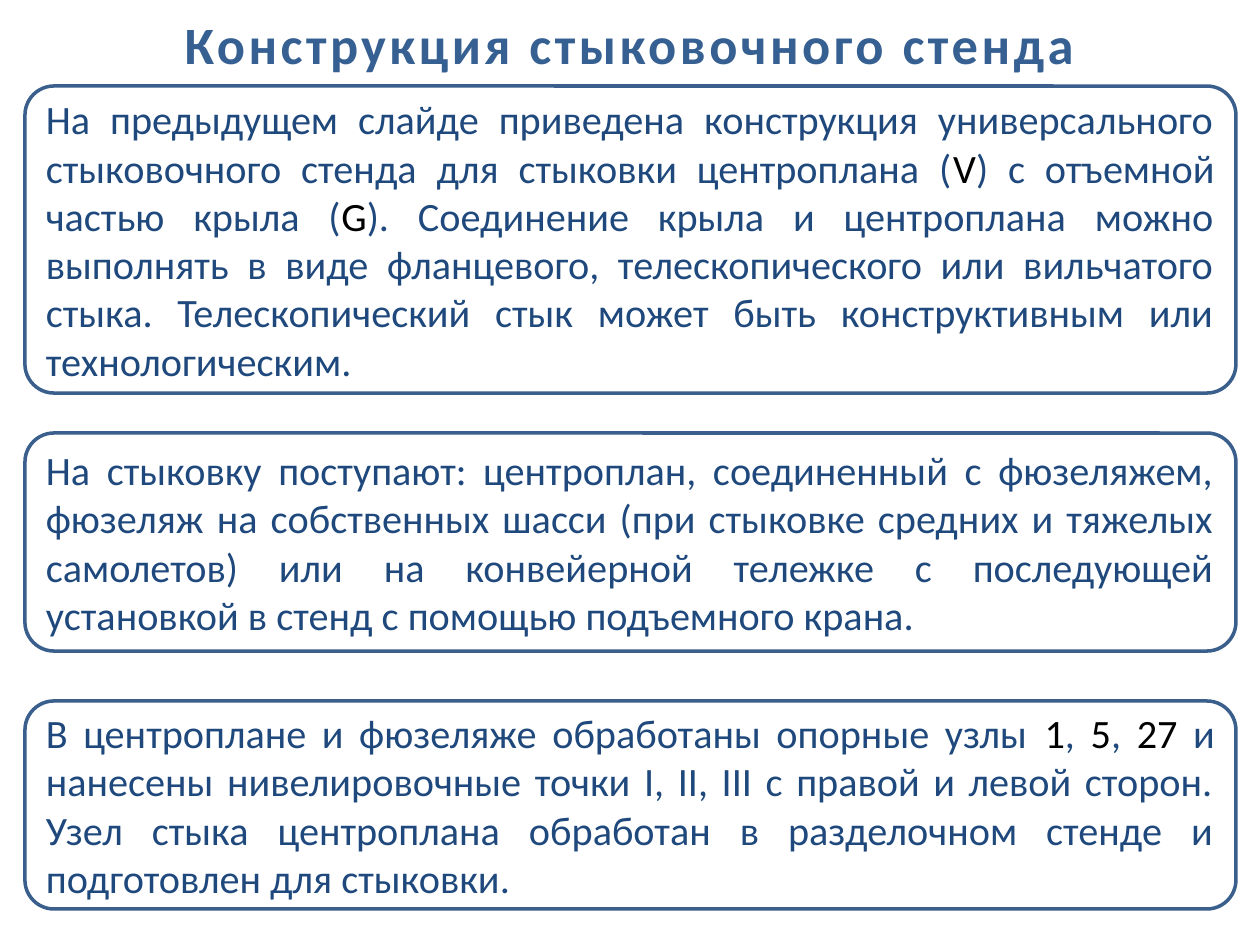
import pptx
import pptx.util
import pptx.dml.color
import pptx.enum.shapes
import pptx.enum.text

SCALE = 914400 / 126
NAVY, BLACK = "1F497D", "000000"
LEFT, WIDTH, RADIUS = 25, 1211, 29

PANELS = [
    (86, 307, [
        ("На предыдущем слайде приведена конструкция универсального стыковочного "
         "стенда для стыковки центроплана (", NAVY),
        ("V", BLACK),
        (") с отъемной частью крыла (", NAVY),
        ("G", BLACK),
        ("). Соединение крыла и центроплана можно выполнять в виде фланцевого, "
         "телескопического или вильчатого стыка. Телескопический стык может быть "
         "конструктивным или технологическим.", NAVY),
    ]),
    (433, 218, [
        ("На стыковку поступают: центроплан, соединенный с фюзеляжем, фюзеляж на "
         "собственных шасси (при стыковке средних и тяжелых самолетов) или на "
         "конвейерной тележке с последующей установкой в стенд с помощью "
         "подъемного крана.", NAVY),
    ]),
    (701, 208, [
        ("В центроплане и фюзеляже обработаны опорные узлы ", NAVY),
        ("1", BLACK),
        (", ", NAVY),
        ("5", BLACK),
        (", ", NAVY),
        ("27", BLACK),
        (" и нанесены нивелировочные точки I, II, III с правой и левой сторон. "
         "Узел стыка центроплана обработан в разделочном стенде и подготовлен "
         "для стыковки.", NAVY),
    ]),
]


def px(n):
    return pptx.util.Emu(round(n * SCALE))


def color(code):
    return pptx.dml.color.RGBColor.from_string(code)


def add_run(para, text, size, code, bold=False):
    run = para.add_run()
    run.text = text
    font = run.font
    font.name = "Calibri"
    font.size = pptx.util.Pt(size)
    font.bold = bold
    font.color.rgb = color(code)
    return run


def add_title(slide, text):
    title = slide.shapes.title
    title.left, title.top, title.width, title.height = px(0), px(6), px(1260), px(69)
    frame = title.text_frame
    frame.word_wrap = True
    frame.auto_size = pptx.enum.text.MSO_AUTO_SIZE.NONE
    frame.vertical_anchor = pptx.enum.text.MSO_ANCHOR.TOP
    para = frame.paragraphs[0]
    para.alignment = pptx.enum.text.PP_ALIGN.CENTER
    run = add_run(para, text, 30, "376092", True)
    run.font._element.set("spc", "200")


def add_panel(slide, top, height, parts):
    kind = pptx.enum.shapes.MSO_SHAPE.ROUNDED_RECTANGLE
    panel = slide.shapes.add_shape(kind, px(LEFT), px(top), px(WIDTH), px(height))
    panel.adjustments[0] = RADIUS / height
    panel.shadow.inherit = False
    panel.fill.background()
    panel.line.color.rgb = color("3A5F8C")
    panel.line.width = pptx.util.Pt(2)
    frame = panel.text_frame
    frame.word_wrap = True
    frame.vertical_anchor = pptx.enum.text.MSO_ANCHOR.MIDDLE
    para = frame.paragraphs[0]
    para.alignment = pptx.enum.text.PP_ALIGN.JUSTIFY
    para.space_after = pptx.util.Pt(6)
    for text, code in parts:
        add_run(para, text, 23, code)


def main():
    deck = pptx.Presentation()
    deck.slide_width, deck.slide_height = px(1260), px(945)
    slide = deck.slides.add_slide(deck.slide_layouts[5])
    add_title(slide, "Конструкция стыковочного стенда")
    for top, height, parts in PANELS:
        add_panel(slide, top, height, parts)
    deck.save("out.pptx")


if __name__ == "__main__":
    main()
